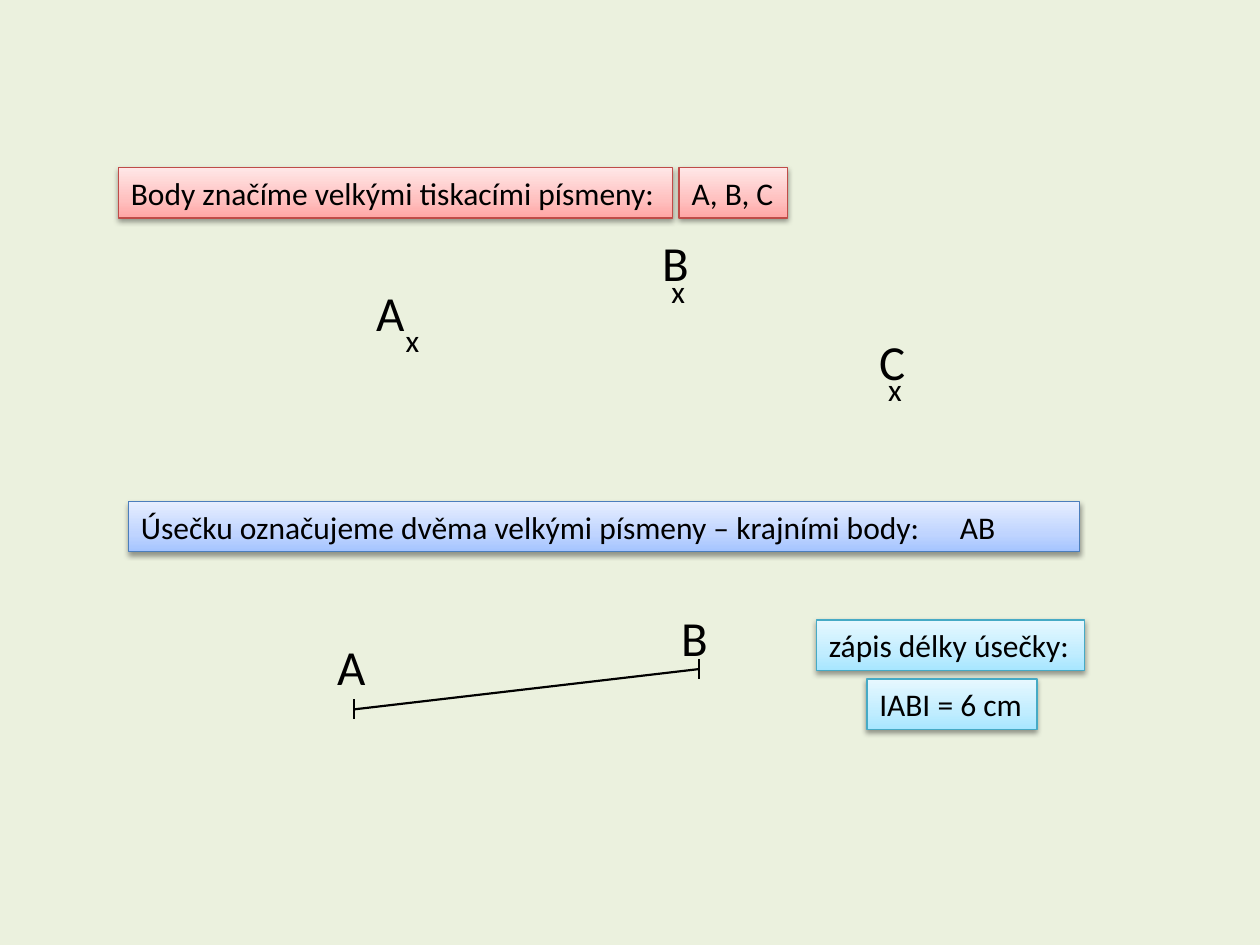
from copy import deepcopy
from dataclasses import dataclass

from lxml import etree
from pptx import Presentation
from pptx.dml.color import RGBColor
from pptx.enum.shapes import MSO_CONNECTOR, MSO_SHAPE
from pptx.enum.text import MSO_AUTO_SIZE, MSO_VERTICAL_ANCHOR, PP_ALIGN
from pptx.oxml import parse_xml
from pptx.oxml.ns import nsdecls, qn
from pptx.shapes.autoshape import Shape
from pptx.slide import Slide
from pptx.util import Inches, Pt

STRAIGHT = MSO_CONNECTOR.STRAIGHT
RECTANGLE = MSO_SHAPE.RECTANGLE
FIT_SHAPE = MSO_AUTO_SIZE.SHAPE_TO_FIT_TEXT
TOP = MSO_VERTICAL_ANCHOR.TOP
LEFT = PP_ALIGN.LEFT
BLANK_LAYOUT = 6


@dataclass(frozen=True)
class Palette:
    line: str
    stops: tuple[str, str, str]


@dataclass(frozen=True)
class Theme:
    font: str = "Calibri"
    body_size: float = 18
    letter_size: float = 28
    border_width: float = 0.75
    segment_width: float = 1.25
    background: str = "EBF1DE"
    ink: str = "000000"
    red: Palette = Palette("BF4C48", ("FFA6A5", "FFC0BF", "FFE7E7"))
    blue: Palette = Palette("4B7EBC", ("A4C4FF", "BFD4FF", "E6EEFF"))
    cyan: Palette = Palette("46AAC5", ("A7E6FF", "C1EDFF", "E7F8FF"))
    stop_positions: tuple[float, float, float] = (0, 0.35, 1)


THEME = Theme()


@dataclass(frozen=True)
class Banner:
    text: str
    left: float
    top: float
    width: float
    palette: Palette
    height: float = 0.4


@dataclass(frozen=True)
class Label:
    text: str
    left: float
    top: float
    width: float
    height: float
    size: float


@dataclass(frozen=True)
class Line:
    start: tuple[float, float]
    end: tuple[float, float]


def cross(left: float, top: float) -> Label:
    return Label("x", left, top, 0.31, 0.4, THEME.body_size)


def letter(text: str, left: float, top: float) -> Label:
    return Label(text, left, top, 0.42, 0.57, THEME.letter_size)


def end_tick(x: float, y: float) -> Line:
    return Line((x, y - 0.08), (x, y + 0.08))


SEGMENT = Line((2.81, 5.63), (5.55, 5.31))

BANNERS = (
    Banner("Body značíme velkými tiskacími písmeny:", 0.94, 1.33, 4.4, THEME.red),
    Banner("A, B, C", 5.39, 1.33, 0.86, THEME.red),
    Banner(
        "Úsečku označujeme dvěma velkými písmeny – krajními body:\tAB",
        1.02, 3.98, 7.55, THEME.blue,
    ),
    Banner("zápis délky úsečky:", 6.48, 4.92, 2.13, THEME.cyan),
    Banner("IABI = 6 cm", 6.88, 5.39, 1.35, THEME.cyan),
)
LABELS = (
    cross(3.12, 2.5),
    cross(5.23, 2.11),
    cross(6.95, 2.89),
    letter("A", 2.89, 2.19),
    letter("B", 5.16, 1.8),
    letter("C", 6.88, 2.58),
    letter("A", 2.58, 5),
    letter("B", 5.31, 4.77),
)
LINES = (SEGMENT, end_tick(*SEGMENT.start), end_tick(*SEGMENT.end))


def color(value: str) -> RGBColor:
    return RGBColor.from_string(value)


def write_text(shape: Shape, text: str, size: float) -> None:
    frame = shape.text_frame
    frame.text = text
    frame.word_wrap = False
    frame.auto_size = FIT_SHAPE
    frame.vertical_anchor = TOP
    paragraph = frame.paragraphs[0]
    paragraph.alignment = LEFT
    for run in paragraph.runs:
        run.font.name = THEME.font
        run.font.size = Pt(size)
        run.font.color.rgb = color(THEME.ink)


def apply_gradient(shape: Shape, palette: Palette) -> None:
    shape.fill.gradient()
    shape.fill.gradient_angle = 90
    stop_list = shape._element.spPr.find(qn("a:gradFill")).find(qn("a:gsLst"))
    stop_list.insert(1, deepcopy(stop_list[0]))
    stops = zip(shape.fill.gradient_stops, THEME.stop_positions, palette.stops)
    for stop, position, value in stops:
        stop.position = position
        stop.color.rgb = color(value)


def apply_shadow(shape: Shape) -> None:
    shape.shadow.inherit = False
    effects = shape._element.spPr.find(qn("a:effectLst"))
    effects.append(parse_xml(
        f'<a:outerShdw {nsdecls("a")} blurRad="{Pt(3.1)}" dist="{Pt(1.6)}" '
        f'dir="5400000" rotWithShape="0"><a:srgbClr val="{THEME.ink}">'
        '<a:alpha val="38000"/></a:srgbClr></a:outerShdw>'
    ))


def draw_banner(slide: Slide, banner: Banner) -> None:
    shape = slide.shapes.add_shape(
        RECTANGLE, Inches(banner.left), Inches(banner.top),
        Inches(banner.width), Inches(banner.height),
    )
    apply_gradient(shape, banner.palette)
    shape.line.color.rgb = color(banner.palette.line)
    shape.line.width = Pt(THEME.border_width)
    apply_shadow(shape)
    write_text(shape, banner.text, THEME.body_size)


def draw_label(slide: Slide, label: Label) -> None:
    shape = slide.shapes.add_textbox(
        Inches(label.left), Inches(label.top),
        Inches(label.width), Inches(label.height),
    )
    write_text(shape, label.text, label.size)


def draw_line(slide: Slide, line: Line) -> None:
    start_x, start_y = map(Inches, line.start)
    end_x, end_y = map(Inches, line.end)
    connector = slide.shapes.add_connector(STRAIGHT, start_x, start_y, end_x, end_y)
    connector.line.color.rgb = color(THEME.ink)
    connector.line.width = Pt(THEME.segment_width)
    etree.SubElement(connector._element.spPr, qn("a:effectLst"))


def main() -> None:
    presentation = Presentation()
    presentation.slide_width = Inches(10)
    presentation.slide_height = Inches(7.5)
    slide = presentation.slides.add_slide(presentation.slide_layouts[BLANK_LAYOUT])
    slide.background.fill.solid()
    slide.background.fill.fore_color.rgb = color(THEME.background)
    for banner in BANNERS:
        draw_banner(slide, banner)
    for label in LABELS:
        draw_label(slide, label)
    for line in LINES:
        draw_line(slide, line)
    presentation.save("out.pptx")


if __name__ == "__main__":
    main()
